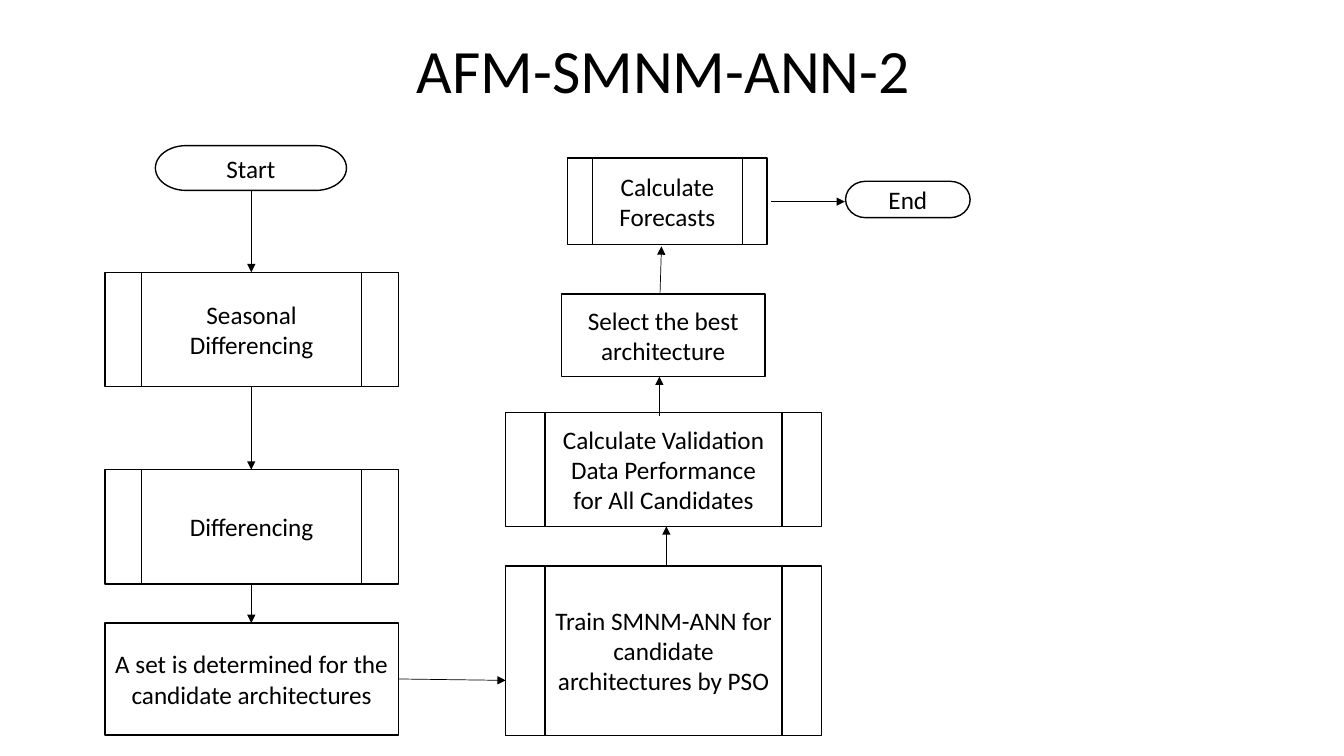
import pptx
import pptx.util
import pptx.dml.color
import pptx.enum.shapes
import pptx.enum.text
import pptx.oxml
import pptx.oxml.ns

Pt = pptx.util.Pt
KINDS = pptx.enum.shapes.MSO_SHAPE
COLOURS = {"ink": "000000", "paper": "FFFFFF"}


def colour(name):
    return pptx.dml.color.RGBColor.from_string(COLOURS[name])


def write(frame, text, size=18, font="Calibri", ink="ink", spacing=1.0):
    frame.word_wrap = True
    frame.auto_size = pptx.enum.text.MSO_AUTO_SIZE.NONE
    frame.vertical_anchor = pptx.enum.text.MSO_ANCHOR.MIDDLE
    paragraph = frame.paragraphs[0]
    paragraph.alignment = pptx.enum.text.PP_ALIGN.CENTER
    paragraph.line_spacing = spacing
    run = paragraph.add_run()
    run.text = text
    run.font.size = Pt(size)
    run.font.name = font
    run.font.color.rgb = colour(ink)


class Flowchart:
    outline = 1
    arrow_width = 0.5

    def __init__(self, slide):
        self.slide = slide
        slide.background.fill.solid()
        slide.background.fill.fore_color.rgb = colour("paper")

    def title(self, text, left, top, width, height):
        heading = self.slide.shapes.title
        heading.left, heading.top = Pt(left), Pt(top)
        heading.width, heading.height = Pt(width), Pt(height)
        write(heading.text_frame, text, size=44, spacing=0.9)

    def step(self, kind, text, left, top, width, height):
        step = self.slide.shapes.add_shape(kind, Pt(left), Pt(top), Pt(width), Pt(height))
        step.shadow.inherit = False
        step.fill.solid()
        step.fill.fore_color.rgb = colour("paper")
        step.line.color.rgb = colour("ink")
        step.line.width = Pt(self.outline)
        write(step.text_frame, text)

    def arrow(self, start_x, start_y, end_x, end_y):
        arrow = self.slide.shapes.add_connector(
            pptx.enum.shapes.MSO_CONNECTOR.STRAIGHT,
            Pt(start_x), Pt(start_y), Pt(end_x), Pt(end_y))
        arrow.line.color.rgb = colour("ink")
        arrow.line.width = Pt(self.arrow_width)
        head = pptx.oxml.parse_xml(
            f'<a:tailEnd {pptx.oxml.ns.nsdecls("a")} type="triangle"/>')
        arrow.line._get_or_add_ln().append(head)
        no_effects = pptx.oxml.parse_xml(
            f'<a:effectLst {pptx.oxml.ns.nsdecls("a")}/>')
        arrow._element.spPr.append(no_effects)


def main():
    deck = pptx.Presentation()
    deck.slide_width, deck.slide_height = Pt(960), Pt(540)
    chart = Flowchart(deck.slides.add_slide(deck.slide_layouts[5]))
    chart.title("AFM-SMNM-ANN-2", 60, 0, 828, 104.4)

    terminator = KINDS.FLOWCHART_TERMINATOR
    subroutine = KINDS.FLOWCHART_PREDEFINED_PROCESS
    process = KINDS.FLOWCHART_PROCESS
    steps = [
        (terminator, "Start", 111, 104, 136.5, 32),
        (subroutine, "Seasonal Differencing", 75, 194.5, 209.5, 81.5),
        (subroutine, "Differencing", 75, 335.5, 209.5, 81.5),
        (process, "A set is determined for the candidate architectures",
         75, 445, 209.5, 80),
        (subroutine, "Train SMNM-ANN for candidate architectures by PSO",
         361.25, 404.25, 225.5, 121),
        (subroutine, "Calculate Validation Data Performance for All Candidates",
         361.25, 294.5, 225.5, 81.5),
        (process, "Select the best architecture", 401, 210, 145.5, 59),
        (subroutine, "Calculate Forecasts", 405.5, 113, 142.5, 61.5),
        (terminator, "End", 604, 129.5, 89, 26),
    ]
    for step in steps:
        chart.step(*step)

    left_axis = 179.5
    arrows = [
        (left_axis, 136, left_axis, 194.5),
        (left_axis, 276, left_axis, 335.5),
        (left_axis, 417, left_axis, 445),
        (284.5, 485, 361.25, 486),
        (476, 404.25, 476, 376),
        (471, 297, 471, 269),
        (471.5, 209, 472.5, 176),
        (551, 144, 603.5, 144),
    ]
    for arrow in arrows:
        chart.arrow(*arrow)

    deck.save("out.pptx")


if __name__ == "__main__":
    main()
